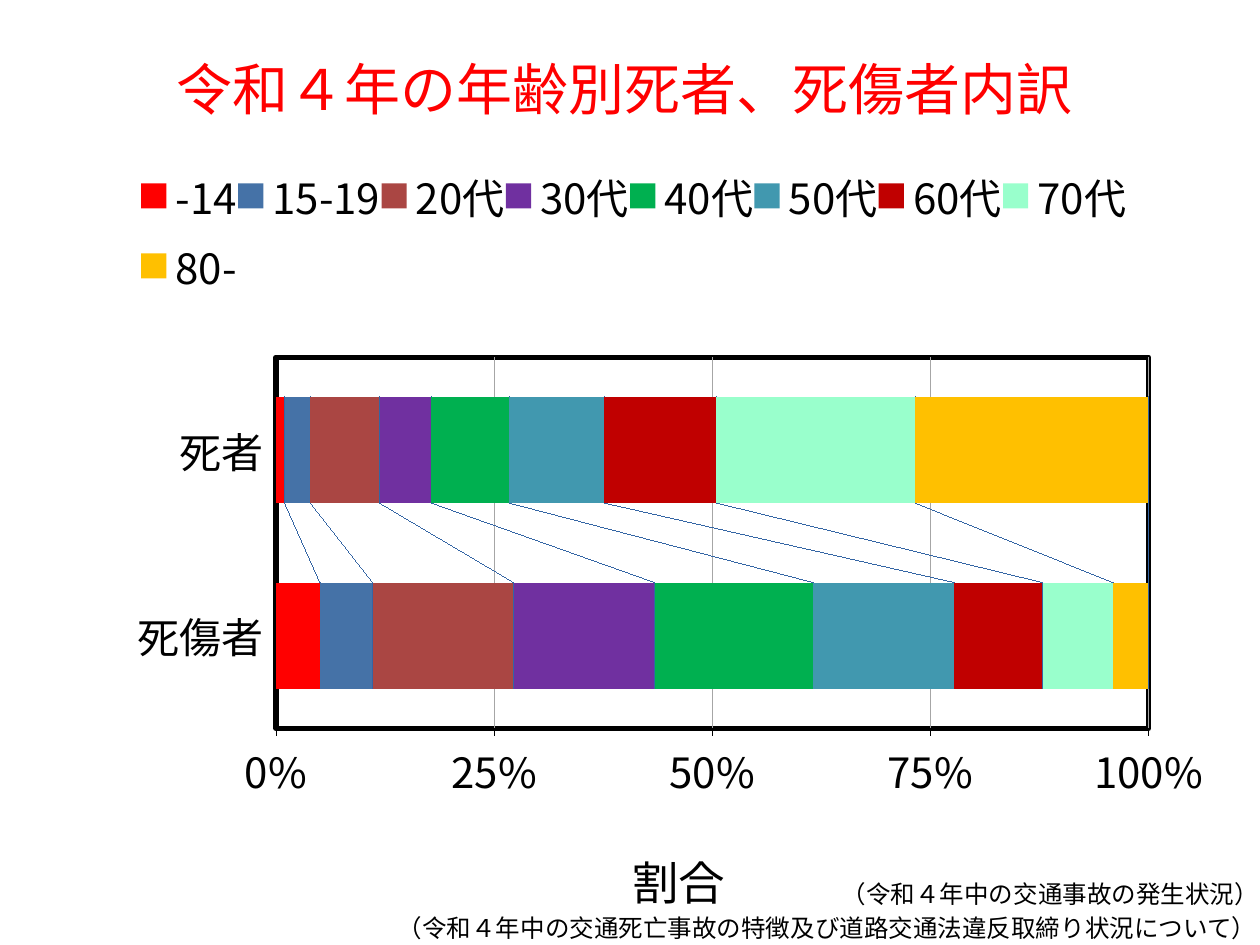
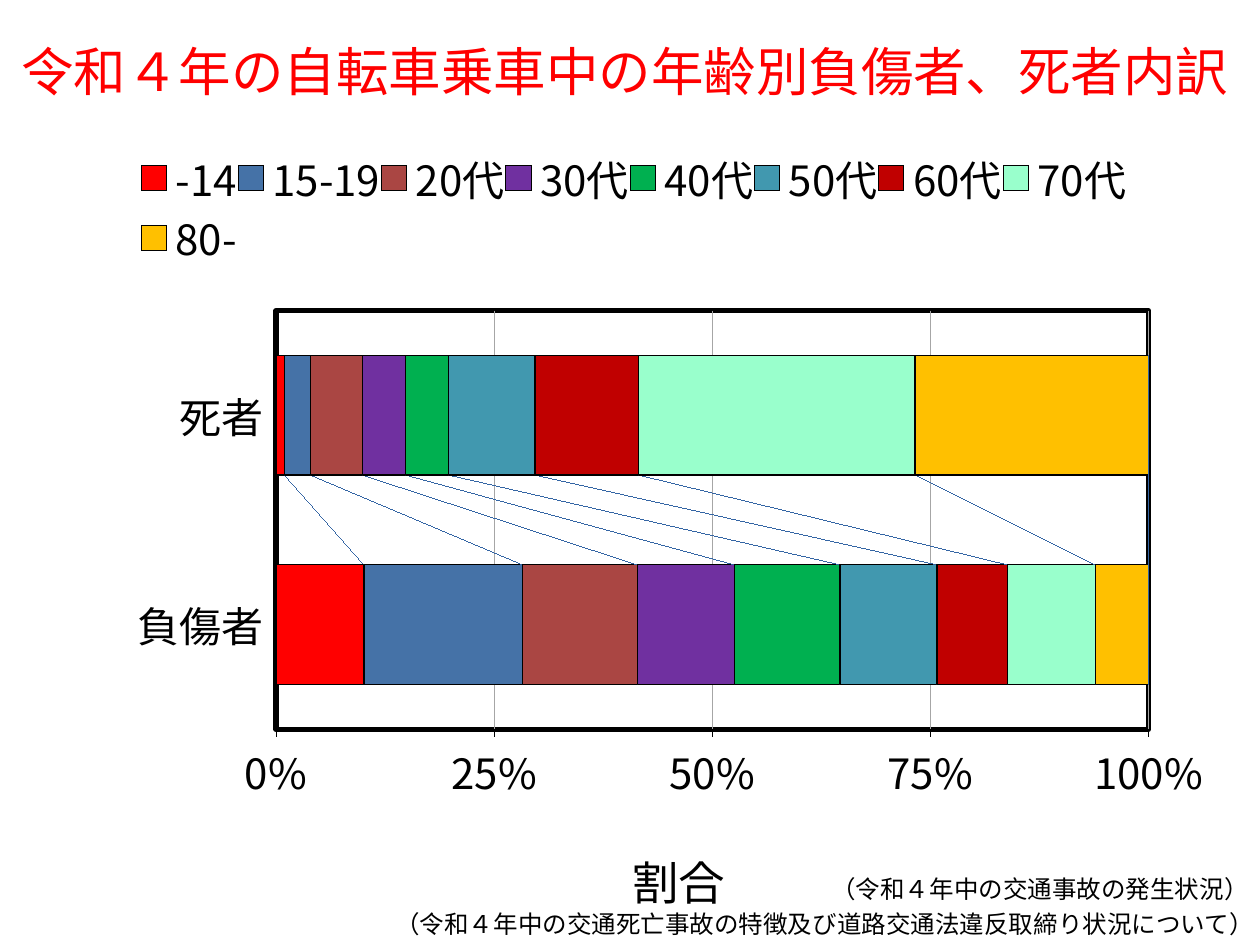
from lxml import etree
from pptx import Presentation
from pptx.chart.data import CategoryChartData
from pptx.dml.color import RGBColor
from pptx.enum.chart import (XL_CHART_TYPE, XL_LEGEND_POSITION,
                             XL_TICK_LABEL_POSITION, XL_TICK_MARK)
from pptx.enum.text import MSO_ANCHOR, MSO_AUTO_SIZE, PP_ALIGN
from pptx.oxml import parse_xml
from pptx.oxml.ns import nsdecls, qn
from pptx.util import Cm, Pt

FONT = "Noto Sans CJK JP"
COLORS = {"title": "FF0000", "text": "000000", "grid": "A6A6A6", "link": "4572A7"}
AGES = {"-14": "FF0000", "15-19": "4572A7", "20代": "AA4643",
        "30代": "7030A0", "40代": "00B050", "50代": "4198AF",
        "60代": "C00000", "70代": "99FFCC", "80-": "FFC000"}
NOTES = ["（令和４年中の交通事故の発生状況）",
         "（令和４年中の交通死亡事故の特徴及び道路交通法違反取締り状況について）"]
SLIDE_W = 25.4

# What differs between the slides; lengths in cm, chart layouts as fractions
SLIDES = [
    {"title": "令和４年の年齢別死者、死傷者内訳", "size": 32, "title_h": 3.18,
     "rows": {"死傷者": [5, 6, 16, 16, 18, 16, 10, 8, 4],
              "死者": [1, 3, 8, 6, 9, 11, 13, 23, 27]},
     "plot": (0.194, 0.285, 0.751, 0.471), "legend": (0.077, 0.03, 0.85, 0.19),
     "outline": False, "notes": [(16.72, 17.6), (7.77, 18.29)]},
    {"title": "令和４年の自転車乗車中の年齢別負傷者、死者内訳", "size": 30, "title_h": 2.49,
     "rows": {"負傷者": [10, 18, 13, 11, 12, 11, 8, 10, 6],
              "死者": [1, 3, 6, 5, 5, 10, 12, 32, 27]},
     "plot": (0.194, 0.226, 0.751, 0.531), "legend": (0.077, 0.02, 0.85, 0.15),
     "outline": True, "notes": [(16.51, 17.5), (7.72, 18.21)]},
]


def set_font(font, size, color="text"):
    font.name, font.size, font.bold = FONT, Pt(size), False
    font.color.rgb = RGBColor.from_string(COLORS[color])
    ea = etree.Element(qn("a:ea"), typeface=FONT)
    font._rPr.find(qn("a:latin")).addnext(ea)


def set_layout(el, index, box, inner=False):
    for old in el.findall(qn("c:layout")):
        el.remove(old)
    target = '<c:layoutTarget val="inner"/>' if inner else ""
    modes = '<c:xMode val="edge"/><c:yMode val="edge"/>'
    sizes = "".join(f'<c:{k} val="{v}"/>' for k, v in zip("xywh", box))
    el.insert(index, parse_xml(
        f'<c:layout {nsdecls("c")}><c:manualLayout>{target}{modes}{sizes}'
        "</c:manualLayout></c:layout>"))


prs = Presentation()
prs.slide_width, prs.slide_height = Cm(SLIDE_W), Cm(19.05)

for info in SLIDES:
    s = prs.slides.add_slide(prs.slide_layouts[5])

    # Title
    sp = s.shapes.title
    sp.left, sp.top, sp.width, sp.height = Cm(0), Cm(0.18), Cm(25.2), Cm(info["title_h"])
    tf = sp.text_frame
    tf.text = info["title"]
    tf.auto_size, tf.vertical_anchor = MSO_AUTO_SIZE.NONE, MSO_ANCHOR.MIDDLE
    p = tf.paragraphs[0]
    p.alignment = PP_ALIGN.CENTER
    set_font(p.font, info["size"], "title")

    # Chart of age shares
    data = CategoryChartData(number_format="0")
    data.categories = list(info["rows"])
    for age, values in zip(AGES, zip(*info["rows"].values())):
        data.add_series(age, values)
    chart = s.shapes.add_chart(XL_CHART_TYPE.BAR_STACKED_100, Cm(1.02), Cm(2.67),
                               Cm(23.42), Cm(16.03), data).chart
    set_font(chart.font, 26.6)
    chart.has_title = False
    plot = chart.plots[0]
    plot.gap_width, plot.overlap, plot.vary_by_categories = 75, 100, False
    for series in plot.series:
        fmt = series.format
        fmt.fill.solid()
        fmt.fill.fore_color.rgb = RGBColor.from_string(AGES[series.name])
        if info["outline"]:
            fmt.line.color.rgb = RGBColor.from_string(COLORS["text"])
            fmt.line.width = Pt(0.75)
        else:
            fmt.line.fill.background()

    # Axes
    cat, val = chart.category_axis, chart.value_axis
    cat.tick_label_position = XL_TICK_LABEL_POSITION.LOW
    cat.major_tick_mark = XL_TICK_MARK.NONE
    val.major_tick_mark = XL_TICK_MARK.OUTSIDE
    val.major_unit = 0.25
    val.tick_labels.number_format = "0%"
    val.tick_labels.number_format_is_linked = False
    for axis in (cat, val):
        set_font(axis.tick_labels.font, 24)
    val.has_major_gridlines = True
    for line, color in ((cat.format.line, "text"), (val.format.line, "text"),
                        (val.major_gridlines.format.line, "grid")):
        line.color.rgb = RGBColor.from_string(COLORS[color])
        line.width = Pt(0.25)
    tf = val.axis_title.text_frame
    tf.text = "割合"
    set_font(tf.paragraphs[0].font, 26.6)

    # Legend
    chart.has_legend = True
    legend = chart.legend
    legend.position = XL_LEGEND_POSITION.TOP
    legend.include_in_layout = False
    set_font(legend.font, 24)

    # Manual layout, plot frame and lines linking the bars
    area = chart.element.xpath("c:chart/c:plotArea")[0]
    set_layout(area, 0, info["plot"], inner=True)
    set_layout(chart.element.xpath("c:chart/c:legend")[0], 1, info["legend"])
    set_layout(area.xpath("c:valAx/c:title")[0], 1, (0.494, 0.889))
    area.append(parse_xml(
        f'<c:spPr {nsdecls("c", "a")}><a:noFill/><a:ln w="38100"><a:solidFill>'
        f'<a:srgbClr val="{COLORS["text"]}"/></a:solidFill></a:ln></c:spPr>'))
    area.xpath("c:barChart/c:axId")[0].addprevious(parse_xml(
        f'<c:serLines {nsdecls("c", "a")}><c:spPr><a:ln w="3175"><a:solidFill>'
        f'<a:srgbClr val="{COLORS["link"]}"/></a:solidFill></a:ln></c:spPr></c:serLines>'))

    # Source notes
    for note, (left, top) in zip(NOTES, info["notes"]):
        tf = s.shapes.add_textbox(Cm(left), Cm(top), Cm(SLIDE_W - left), Cm(0.86)).text_frame
        tf.word_wrap = False
        tf.margin_right = 0
        tf.text = note
        set_font(tf.paragraphs[0].font, 14)

prs.save("out.pptx")
